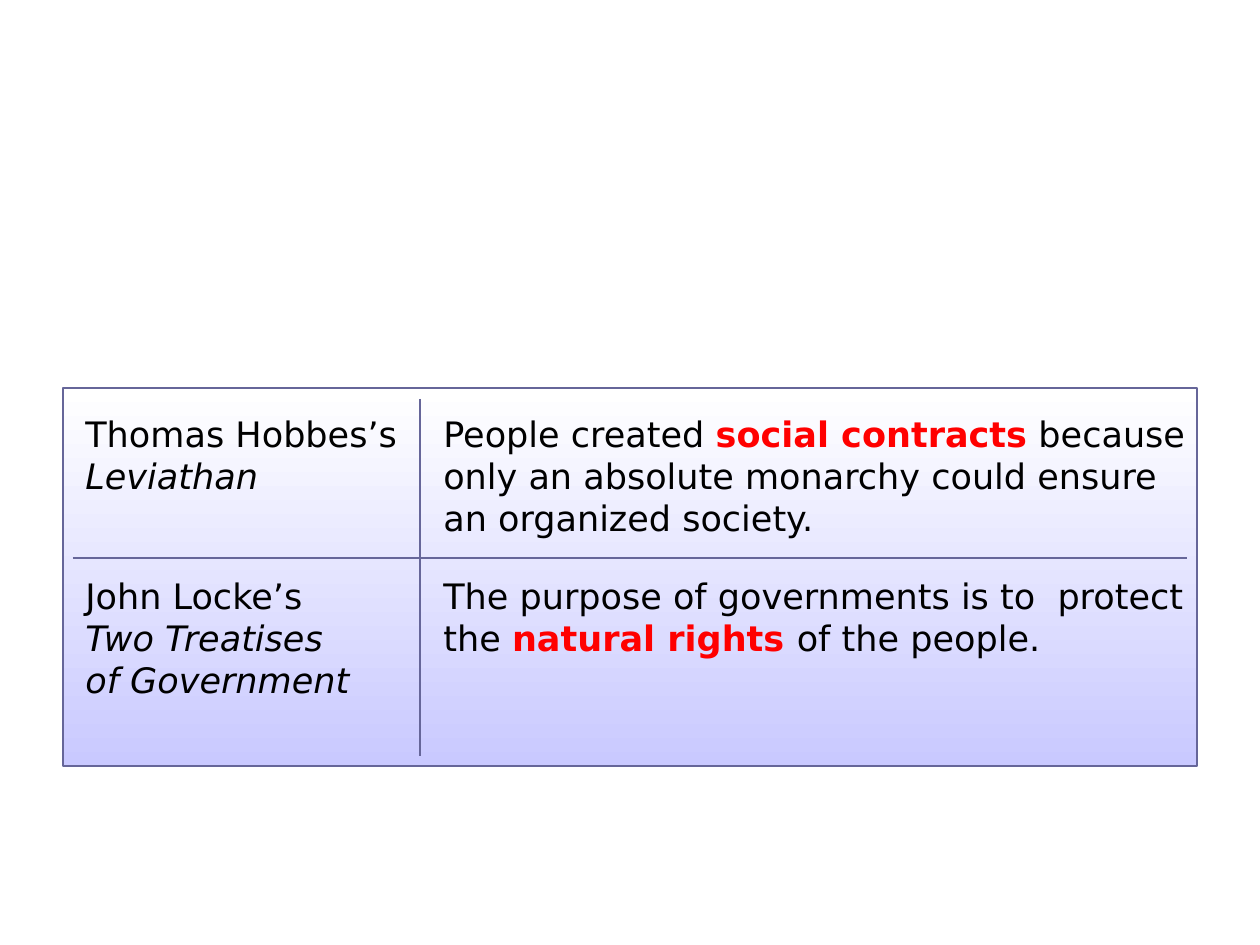
"""Build a slide comparing the political ideas of Hobbes and Locke."""
from lxml import etree
from pptx import Presentation
from pptx.dml.color import RGBColor
from pptx.enum.shapes import MSO_CONNECTOR, MSO_SHAPE
from pptx.oxml.ns import qn
from pptx.util import Emu, Pt

RECTANGLE = MSO_SHAPE.RECTANGLE
STRAIGHT = MSO_CONNECTOR.STRAIGHT
COLORS = {
    "text": "000000",
    "key": "FF0000",
    "line": "666699",
    "top": "FFFFFF",
    "bottom": "C9C9FF",
}
FONT = "DejaVu Sans"
PX = 914400 / 126

FRAME = (63, 388, 1134, 378)
DIVIDERS = [(420, 399, 420, 756), (73, 558, 1187, 558)]
COLUMNS = [(73, 456), (431, 768)]
ROWS = [(406, 140), (568, 164)]
CELLS = [
    [
        [("Thomas Hobbes’s ", "plain"), ("Leviathan", "title")],
        [
            ("People created ", "plain"),
            ("social contracts", "key"),
            (" because only an absolute monarchy could ensure an organized society.", "plain"),
        ],
    ],
    [
        [("John Locke’s \n", "plain"), ("Two Treatises \nof Government", "title")],
        [
            ("The purpose of governments is to  protect the ", "plain"),
            ("natural rights ", "key"),
            ("of the people.", "plain"),
        ],
    ],
]
STYLES = {
    "plain": {},
    "title": {"italic": True},
    "key": {"bold": True, "color": "key"},
}


def scaled(*lengths):
    return [Emu(round(length * PX)) for length in lengths]


def color_of(name):
    return RGBColor.from_string(COLORS[name])


def set_line(line, width):
    line.color.rgb = color_of("line")
    line.width = Pt(width)


def add_text(paragraph, text, size=20, color="text", bold=False, italic=False):
    for index, part in enumerate(text.split("\n")):
        if index:
            paragraph.add_line_break()
        if part:
            run = paragraph.add_run()
            run.text = part
            run.font.name = FONT
            run.font.size = Pt(size)
            run.font.bold = bold
            run.font.italic = italic
            run.font.color.rgb = color_of(color)


def add_frame(slide):
    shape = slide.shapes.add_shape(RECTANGLE, *scaled(*FRAME))
    shape.shadow.inherit = False
    shape.fill.gradient()
    shape.fill.gradient_angle = 270
    for stop, position, name in zip(shape.fill.gradient_stops, (0, 1), ("top", "bottom")):
        stop.position = position
        stop.color.rgb = color_of(name)
    set_line(shape.line, 1.5)


def add_divider(slide, ends):
    connector = slide.shapes.add_connector(STRAIGHT, *scaled(*ends))
    set_line(connector.line, 1)
    etree.SubElement(connector._element.spPr, qn("a:effectLst"))


def add_cell(slide, box, runs):
    frame = slide.shapes.add_textbox(*scaled(*box)).text_frame
    frame.word_wrap = True
    for text, style in runs:
        add_text(frame.paragraphs[0], text, **STYLES[style])


def main():
    presentation = Presentation()
    presentation.slide_width, presentation.slide_height = scaled(1260, 945)
    slide = presentation.slides.add_slide(presentation.slide_layouts[6])
    add_frame(slide)
    for ends in DIVIDERS:
        add_divider(slide, ends)
    for (top, height), row in zip(ROWS, CELLS):
        for (left, width), runs in zip(COLUMNS, row):
            add_cell(slide, (left, top, width, height), runs)
    presentation.save("out.pptx")


if __name__ == "__main__":
    main()
